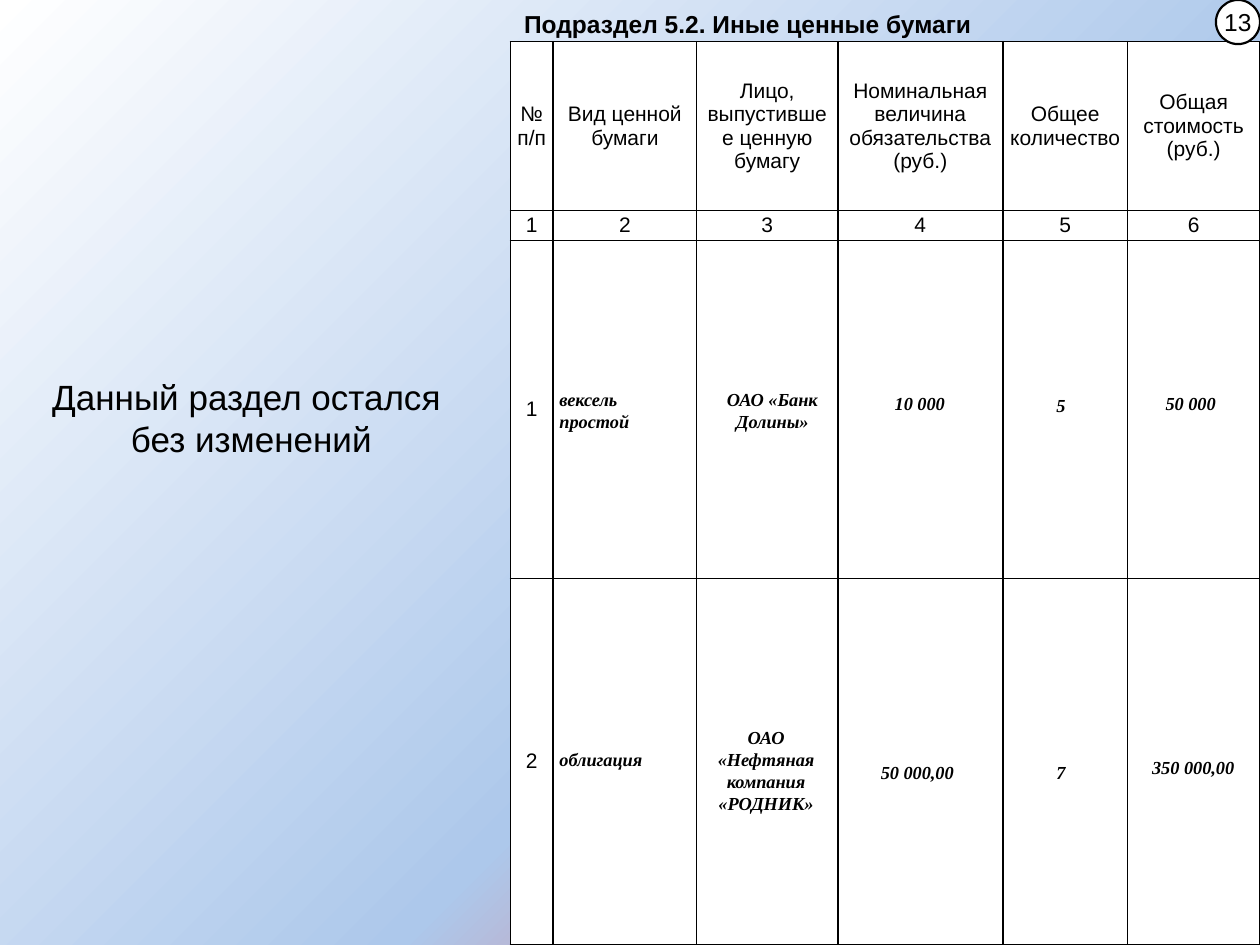
from copy import deepcopy
from lxml import etree
from pptx import Presentation
from pptx.dml import color
from pptx.enum import shapes, text
from pptx.oxml import ns
from pptx.util import Inches, Pt

BLACK = color.RGBColor(0, 0, 0)
WHITE = color.RGBColor(255, 255, 255)
SKY = color.RGBColor(0xAD, 0xC8, 0xEB)
CORAL = color.RGBColor(0xFF, 0x4C, 0x4C)
BACKDROP = [(0, WHITE), (0.61, SKY), (1, CORAL)]

LEFT, CENTER = text.PP_ALIGN.LEFT, text.PP_ALIGN.CENTER
TOP, MIDDLE = text.MSO_ANCHOR.TOP, text.MSO_ANCHOR.MIDDLE

REMARK = ["Данный раздел остался ", "без изменений"]
HEADING = ["Подраздел 5.2. Иные ценные бумаги"]
PAGE_NUMBER = ["13"]

COLUMN_WIDTHS = [0.34, 1.14, 1.12, 1.31, 0.99, 1.05]
ROW_HEIGHTS = [1.34, 0.24, 2.68, 2.91]
SECURITIES = [
    [["№ п/п"], ["Вид ценной бумаги"],
     ["Лицо,", "выпустившее ценную бумагу"],
     ["Номинальная величина", "обязательства (руб.)"],
     ["Общее", "количество"], ["Общая стоимость", "(руб.)"]],
    [["1"], ["2"], ["3"], ["4"], ["5"], ["6"]],
    [["1"]],
    [["2"]],
]

ENTRY_WIDTH, ENTRY_LINE = 0.78, 0.18
ENTRIES = [
    (4.44, 3.08, 2, LEFT, ["вексель", "простой"]),
    (5.74, 3.08, 2, CENTER, ["ОАО «Банк Долины»"]),
    (6.91, 3.11, 1, CENTER, ["10 000"]),
    (8.03, 3.13, 1, CENTER, ["5"]),
    (9.06, 3.11, 1, CENTER, ["50 000"]),
    (4.44, 5.94, 1, LEFT, ["облигация"]),
    (5.69, 5.76, 4, CENTER, ["ОАО «Нефтяная компания «РОДНИК»"]),
    (6.89, 6.04, 1, CENTER, ["50 000,00"]),
    (8.03, 6.04, 1, CENTER, ["7"]),
    (9.08, 6, 1, CENTER, ["350 000,00"]),
]


def write(frame, lines, size, align=CENTER, font="Arial", bold=False, italic=False):
    for index, line in enumerate(lines):
        paragraph = frame.paragraphs[0] if index == 0 else frame.add_paragraph()
        paragraph.alignment = align
        run = paragraph.add_run()
        run.text = line
        run.font.name = font
        run.font.size = Pt(size)
        run.font.bold = bold
        run.font.italic = italic
        run.font.color.rgb = BLACK


def set_margins(holder, left, top, right, bottom):
    holder.margin_left, holder.margin_top = Inches(left), Inches(top)
    holder.margin_right, holder.margin_bottom = Inches(right), Inches(bottom)


def add_text(slide, box, margins=(0.1, 0.05, 0.1, 0.05)):
    frame = slide.shapes.add_textbox(*map(Inches, box)).text_frame
    frame.word_wrap = True
    frame.vertical_anchor = TOP
    set_margins(frame, *margins)
    return frame


def paint_background(slide):
    fill = slide.background.fill
    fill.gradient()
    fill.gradient_angle = 315
    stops = slide.element.xpath(".//a:gsLst")[0]
    stops.append(deepcopy(stops[-1]))
    for stop, (position, shade) in zip(fill.gradient_stops, BACKDROP):
        stop.position = position
        stop.color.rgb = shade


def add_borders(cell):
    properties = cell._tc.get_or_add_tcPr()
    for index, side in enumerate(("lnL", "lnR", "lnT", "lnB")):
        border = etree.Element(ns.qn(f"a:{side}"), w=str(Pt(1)))
        fill = etree.SubElement(border, ns.qn("a:solidFill"))
        etree.SubElement(fill, ns.qn("a:srgbClr"), val=str(BLACK))
        properties.insert(index, border)


def add_securities(slide):
    box = (4.05, 0.33, sum(COLUMN_WIDTHS), sum(ROW_HEIGHTS))
    table = slide.shapes.add_table(
        len(ROW_HEIGHTS), len(COLUMN_WIDTHS), *map(Inches, box)).table
    for column, width in zip(table.columns, COLUMN_WIDTHS):
        column.width = Inches(width)
    for row, height, contents in zip(table.rows, ROW_HEIGHTS, SECURITIES):
        row.height = Inches(height)
        for cell in row.cells:
            cell.fill.solid()
            cell.fill.fore_color.rgb = WHITE
            cell.vertical_anchor = MIDDLE
            set_margins(cell, 0.05, 0, 0.05, 0)
            add_borders(cell)
        for cell, lines in zip(row.cells, contents):
            write(cell.text_frame, lines, 12)


def add_page_number(slide):
    badge = slide.shapes.add_shape(
        shapes.MSO_SHAPE.OVAL, *map(Inches, (9.65, 0, 0.35, 0.35)))
    badge.shadow.inherit = False
    badge.fill.solid()
    badge.fill.fore_color.rgb = WHITE
    badge.line.color.rgb = BLACK
    badge.line.width = Pt(1.25)
    badge.text_frame.word_wrap = False
    badge.text_frame.vertical_anchor = MIDDLE
    write(badge.text_frame, PAGE_NUMBER, 14)


def main():
    deck = Presentation()
    deck.slide_width, deck.slide_height = Inches(10), Inches(7.5)
    slide = deck.slides.add_slide(deck.slide_layouts[6])
    paint_background(slide)
    write(add_text(slide, (-0.05, 2.93, 4.09, 0.77)), REMARK, 20)
    add_securities(slide)
    heading = add_text(slide, (3.68, 0, 4.16, 0.64), (0.48, 0.07, 0, 0.05))
    write(heading, HEADING, 14, LEFT, bold=True)
    for left, top, line_count, align, lines in ENTRIES:
        box = (left, top, ENTRY_WIDTH, line_count * ENTRY_LINE)
        write(add_text(slide, box, (0, 0, 0, 0)), lines, 10.5, align,
              "Times New Roman", bold=True, italic=True)
    add_page_number(slide)
    deck.save("out.pptx")


if __name__ == "__main__":
    main()
